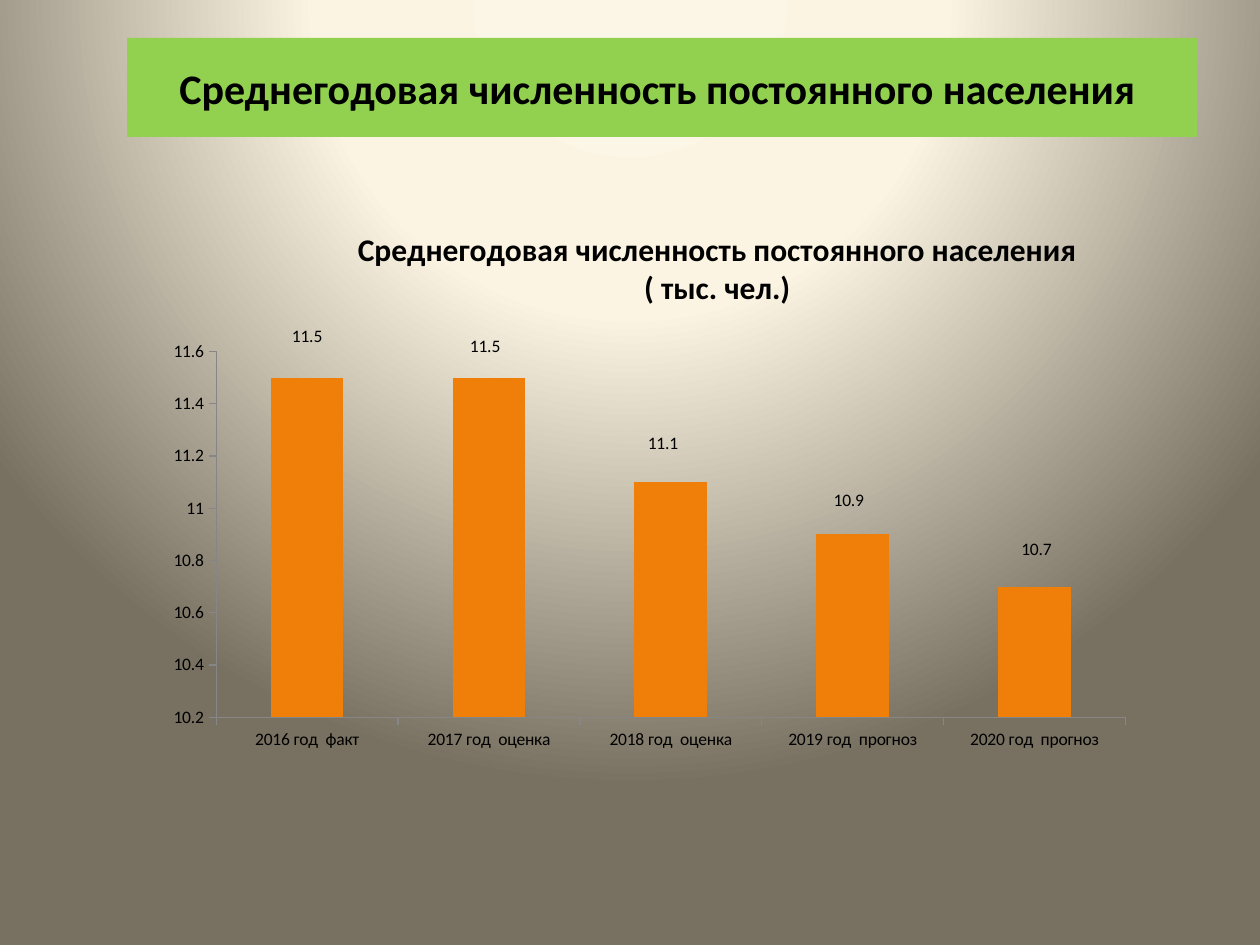
from pptx import Presentation
from pptx.chart.data import CategoryChartData
from pptx.dml.color import RGBColor
from pptx.enum.chart import XL_CHART_TYPE, XL_TICK_MARK
from pptx.enum.shapes import MSO_SHAPE
from pptx.enum.text import MSO_ANCHOR, PP_ALIGN
from pptx.oxml import parse_xml
from pptx.oxml.ns import nsdecls, qn
from pptx.util import Inches, Pt


def tint(code):
    return RGBColor.from_string(code)


def place(node, spot, inner=False, **shares):
    old = node.find(qn("c:layout"))
    if old is not None:
        node.remove(old)
    modes = '<c:layoutTarget val="inner"/>' if inner else ""
    if inner or node.tag == qn("c:title"):
        modes += '<c:xMode val="edge"/><c:yMode val="edge"/>'
    sizes = "".join(f'<c:{key} val="{val}"/>' for key, val in shares.items())
    node.insert(spot, parse_xml(
        f'<c:layout {nsdecls("c")}><c:manualLayout>{modes}{sizes}'
        "</c:manualLayout></c:layout>"))


def unlead(labels):
    for old in labels.findall(qn("c:showLeaderLines")):
        labels.remove(old)
    labels.append(parse_xml(f'<c:showLeaderLines {nsdecls("c")} val="0"/>'))


class Deck:
    face = "Calibri"
    ink = "000000"
    bar = "F07F09"
    band = "92D050"
    axis = "868686"

    def __init__(self, wide, high):
        self.prs = Presentation()
        self.prs.slide_width = Inches(wide)
        self.prs.slide_height = Inches(high)
        self.slide = self.prs.slides.add_slide(self.prs.slide_layouts[6])

    def box(self, left, top, wide, high):
        full, tall = self.prs.slide_width, self.prs.slide_height
        return (int(left * full), int(top * tall),
                int(wide * full), int(high * tall))

    def style(self, font, size, bold=False):
        font.name, font.size, font.bold = self.face, Pt(size), bold
        font.color.rgb = tint(self.ink)

    def glow(self, stops):
        self.slide.background.fill.gradient()
        old = self.slide.element.find(".//" + qn("a:gradFill"))
        marks = "".join(
            f'<a:gs pos="{pos * 1000}"><a:srgbClr val="{code}"/></a:gs>'
            for pos, code in stops)
        old.getparent().replace(old, parse_xml(
            f'<a:gradFill {nsdecls("a")} rotWithShape="1"><a:gsLst>{marks}</a:gsLst>'
            '<a:path path="circle"><a:fillToRect l="50000" t="-80000" '
            'r="50000" b="180000"/></a:path></a:gradFill>'))

    def head(self, text, area):
        shape = self.slide.shapes.add_shape(MSO_SHAPE.RECTANGLE, *self.box(*area))
        shape.shadow.inherit = False
        shape.fill.solid()
        shape.fill.fore_color.rgb = tint(self.band)
        shape.line.fill.background()
        frame = shape.text_frame
        frame.word_wrap = True
        frame.vertical_anchor = MSO_ANCHOR.MIDDLE
        para = frame.paragraphs[0]
        para.text = text
        para.alignment = PP_ALIGN.CENTER
        self.style(para.font, 24, True)

    def chart(self, title, cats, vals, shifts, area):
        data = CategoryChartData()
        data.categories = cats
        data.add_series("Series 1", vals)
        chart = self.slide.shapes.add_chart(
            XL_CHART_TYPE.COLUMN_STACKED, *self.box(*area), data).chart
        self.style(chart.font, 10)
        chart.has_legend = False
        chart.has_title = True
        frame = chart.chart_title.text_frame
        frame.text = title
        for para in frame.paragraphs:
            para.alignment = PP_ALIGN.CENTER
            self.style(para.font, 18, True)
        root = chart.element
        place(root.find(".//" + qn("c:title")), 1, x=0.202, y=0.001)
        place(root.find(".//" + qn("c:plotArea")), 0, True,
              x=0.063, y=0.238, w=0.917, h=0.683)
        self.axes(chart)
        plot = chart.plots[0]
        plot.gap_width, plot.overlap = 150, 100
        plot.vary_by_categories = False
        row = plot.series[0]
        row.format.fill.solid()
        row.format.fill.fore_color.rgb = tint(self.bar)
        row.data_labels.show_value = True
        for spot in range(len(vals)):
            self.style(row.points[spot].data_label.font, 10)
        for label, (x, y) in zip(root.iter(qn("c:dLbl")), shifts):
            place(label, 1, x=x, y=y)
        unlead(root.find(".//" + qn("c:dLbls")))

    def axes(self, chart):
        for axis in (chart.category_axis, chart.value_axis):
            axis.has_major_gridlines = False
            axis.major_tick_mark = XL_TICK_MARK.OUTSIDE
            axis.minor_tick_mark = XL_TICK_MARK.NONE
            axis.format.line.color.rgb = tint(self.axis)
            axis.format.line.width = Pt(0.75)
            self.style(axis.tick_labels.font, 10)
        axis = chart.value_axis
        axis.minimum_scale, axis.maximum_scale = 10.2, 11.6
        axis.major_unit = 0.2


def main():
    deck = Deck(10, 7.5)
    deck.glow([(0, "FCF6E6"), (40, "FBF4E2"), (100, "787161")])
    topic = "Среднегодовая численность постоянного населения"
    deck.head(topic + " ", (0.101, 0.04, 0.849, 0.105))
    kinds = ["факт", "оценка", "оценка", "прогноз", "прогноз"]
    cats = [f"{year} год  {kind}" for year, kind in enumerate(kinds, 2016)]
    shifts = [(0, -0.394), (-0.004, -0.375), (-0.008, -0.292),
              (-0.004, -0.233), (0.002, -0.192)]
    deck.chart(topic + "\n( тыс. чел.)", cats, [11.5, 11.5, 11.1, 10.9, 10.7],
               shifts, (0.122, 0.237, 0.787, 0.567))
    deck.prs.save("out.pptx")


if __name__ == "__main__":
    main()
